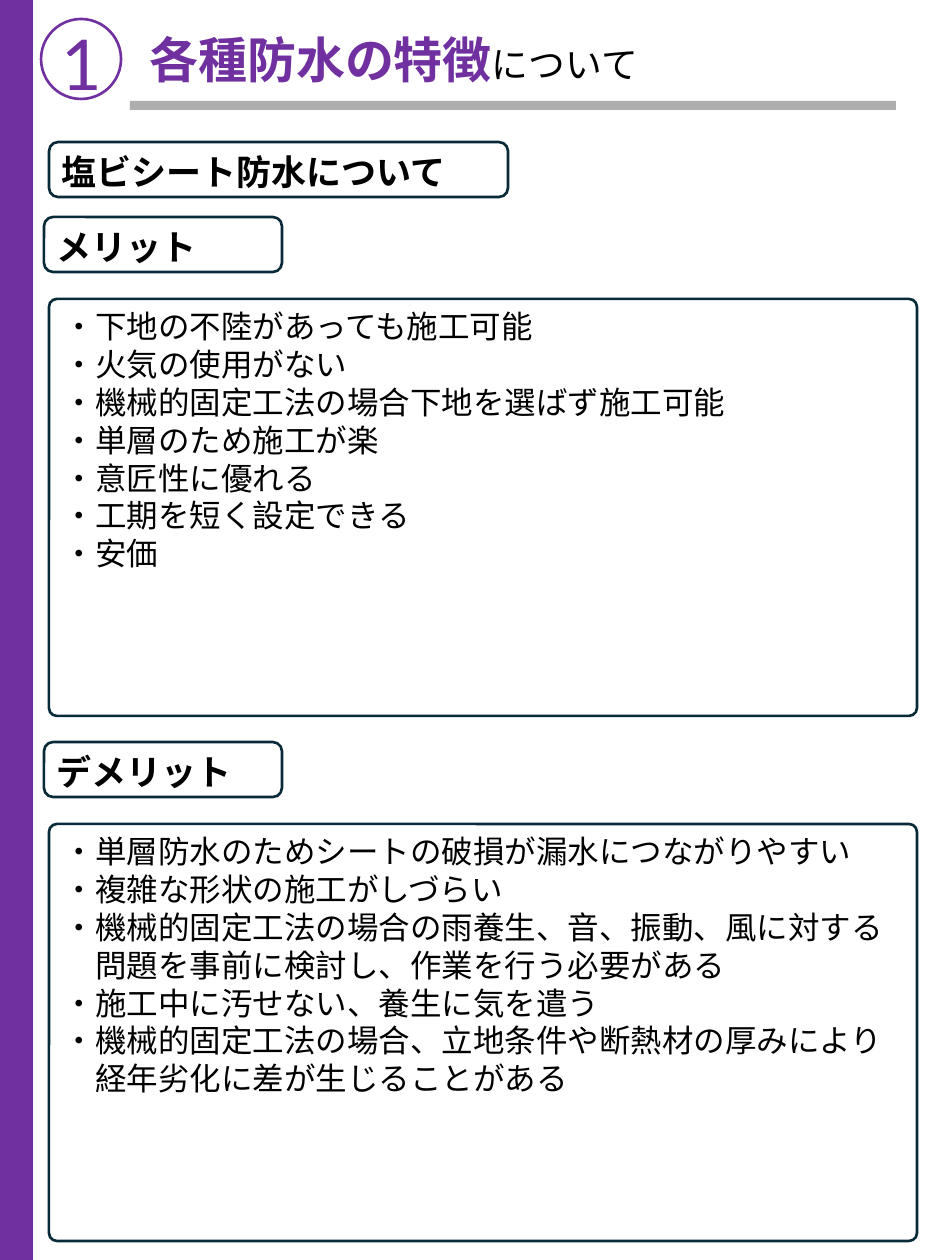
from dataclasses import dataclass

from pptx import Presentation
from pptx.dml.color import RGBColor
from pptx.enum.shapes import MSO_SHAPE
from pptx.enum.text import MSO_ANCHOR, PP_ALIGN
from pptx.util import Emu, Pt

EMU_PER_PX = 914400 / 126


def px(length):
    return Emu(round(length * EMU_PER_PX))


@dataclass(frozen=True)
class Theme:
    accent: str = "7030A0"
    rule: str = "AEAEAE"
    outline: str = "092A39"
    paper: str = "FFFFFF"
    ink: str = "000000"
    font: str = "Lato"
    label_font: str = "Noto Sans CJK JP"
    number_size: int = 40
    title_size: int = 28
    subtitle_size: int = 21
    label_size: int = 20
    body_size: int = 18
    line_width: float = 1.5


class SlideBuilder:
    def __init__(self, slide, theme):
        self.slide = slide
        self.theme = theme

    def style(self, font, size, color, bold=False, name=None):
        font.name = name or self.theme.font
        font.size = Pt(size)
        font.bold = bold
        font.color.rgb = RGBColor.from_string(color)

    def shape(self, kind, box, fill, line=None):
        shape = self.slide.shapes.add_shape(kind, *map(px, box))
        shape.shadow.inherit = False
        shape.fill.solid()
        shape.fill.fore_color.rgb = RGBColor.from_string(fill)
        if line:
            shape.line.color.rgb = RGBColor.from_string(line)
            shape.line.width = Pt(self.theme.line_width)
        else:
            shape.line.fill.background()
        return shape

    def text(self, box):
        frame = self.slide.shapes.add_textbox(*map(px, box)).text_frame
        frame.word_wrap = True
        return frame.paragraphs[0]

    def number(self, digit):
        t = self.theme
        self.shape(MSO_SHAPE.OVAL, (41, 19, 80, 80), t.paper, t.accent)
        paragraph = self.text((49, 14, 54, 97))
        paragraph.text = digit
        self.style(paragraph.font, t.number_size, t.accent)

    def title(self, topic, ending):
        t = self.theme
        self.shape(MSO_SHAPE.RECTANGLE, (130, 101, 766, 9), t.rule)
        paragraph = self.text((137, 30, 808, 79))
        paragraph.line_spacing = 0.9
        for words, size, color, bold in (
            (topic, t.title_size, t.accent, True),
            (ending, t.subtitle_size, t.ink, False),
        ):
            run = paragraph.add_run()
            run.text = words
            self.style(run.font, size, color, bold)

    def label(self, words, left, top, width, text_width, font=None):
        t = self.theme
        self.shape(MSO_SHAPE.ROUNDED_RECTANGLE, (left, top, width, 55), t.paper, t.outline)
        paragraph = self.text((left, top + 2, text_width, 55))
        paragraph.text = words
        self.style(paragraph.font, t.label_size, t.ink, True, font)

    def panel(self, lines, top):
        t = self.theme
        panel = self.shape(MSO_SHAPE.ROUNDED_RECTANGLE, (49, top, 868, 417), t.paper, t.outline)
        panel.adjustments[0] = 0.019
        frame = panel.text_frame
        frame.vertical_anchor = MSO_ANCHOR.TOP
        frame.text = "\n".join(lines)
        for paragraph in frame.paragraphs:
            paragraph.alignment = PP_ALIGN.LEFT
            self.style(paragraph.font, t.body_size, t.ink)


SECTIONS = {
    "メリット": [
        "・下地の不陸があっても施工可能",
        "・火気の使用がない",
        "・機械的固定工法の場合下地を選ばず施工可能",
        "・単層のため施工が楽",
        "・意匠性に優れる",
        "・工期を短く設定できる",
        "・安価",
    ],
    "デメリット": [
        "・単層防水のためシートの破損が漏水につながりやすい",
        "・複雑な形状の施工がしづらい",
        "・機械的固定工法の場合の雨養生、音、振動、風に対する",
        "　問題を事前に検討し、作業を行う必要がある",
        "・施工中に汚せない、養生に気を遣う",
        "・機械的固定工法の場合、立地条件や断熱材の厚みにより",
        "　経年劣化に差が生じることがある",
    ],
}
SECTION_TOP, SECTION_PITCH, PANEL_OFFSET = 217, 525, 82


def main():
    presentation = Presentation()
    presentation.slide_width, presentation.slide_height = px(945), px(1260)
    theme = Theme()
    builder = SlideBuilder(presentation.slides.add_slide(presentation.slide_layouts[6]), theme)

    # Heading
    builder.number("1")
    builder.title("各種防水の特徴", "について")
    builder.label("塩ビシート防水について", 49, 142, 459, 552)

    # Merits and demerits
    for index, (heading, lines) in enumerate(SECTIONS.items()):
        top = SECTION_TOP + index * SECTION_PITCH
        builder.label(heading, 44, top, 238, 348, theme.label_font)
        builder.panel(lines, top + PANEL_OFFSET)

    # Side band
    builder.shape(MSO_SHAPE.RECTANGLE, (0, 0, 33, 1260), theme.accent)

    presentation.save("out.pptx")


if __name__ == "__main__":
    main()
